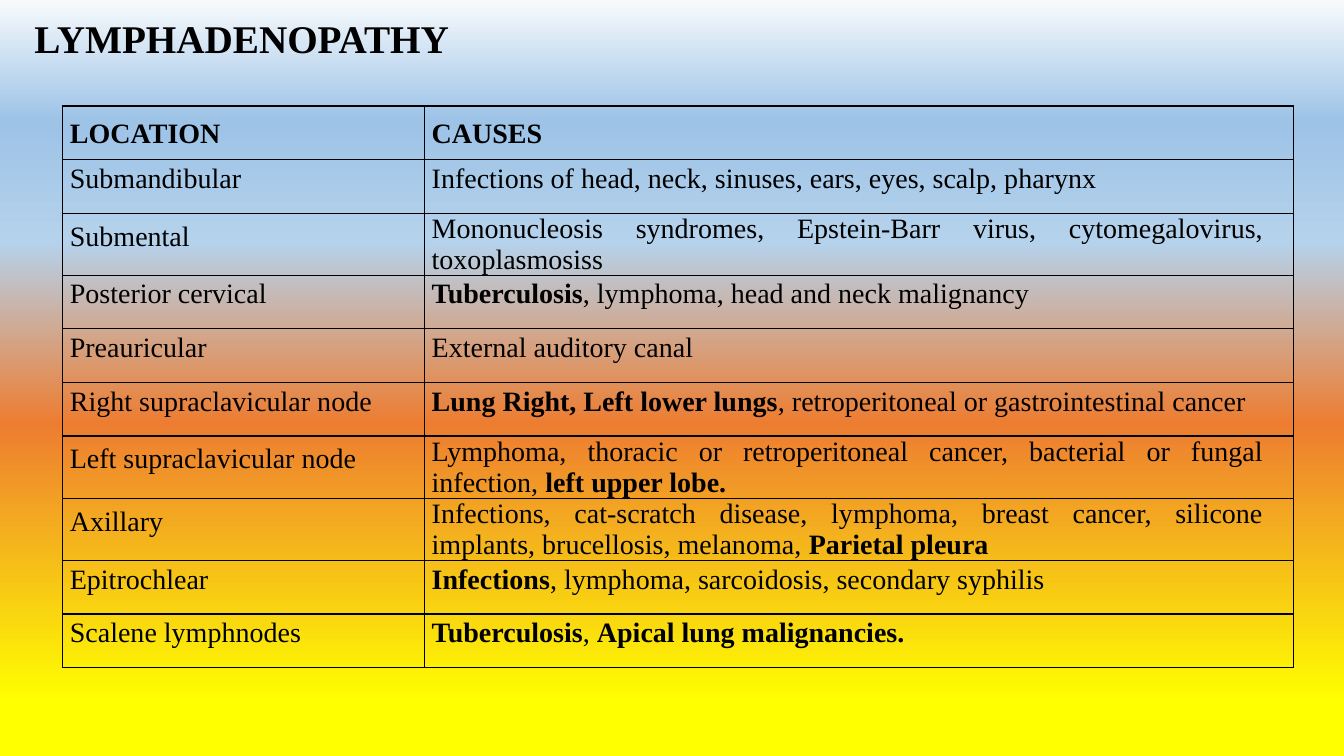
from copy import deepcopy

from lxml.etree import SubElement
from pptx import Presentation
from pptx.dml.color import RGBColor
from pptx.enum.text import MSO_ANCHOR, MSO_AUTO_SIZE, PP_ALIGN
from pptx.oxml.ns import qn
from pptx.util import Cm, Pt

FONT = "Times New Roman"
BLACK = RGBColor(0x00, 0x00, 0x00)
BACKGROUND_STOPS = [
    (0, RGBColor(0xF7, 0xFA, 0xFD)),
    (0.16, RGBColor(0x9D, 0xC3, 0xE6)),
    (0.32, RGBColor(0xB5, 0xD2, 0xEC)),
    (0.56, RGBColor(0xED, 0x7D, 0x31)),
    (0.93, RGBColor(0xFF, 0xFF, 0x00)),
]

HEADINGS = ["LOCATION", "CAUSES"]
# Each cause is a list of (text, bold) runs.
LYMPH_NODES = [
    ("Submandibular",
     [("Infections of head, neck, sinuses, ears, eyes, scalp, pharynx", False)]),
    ("Submental",
     [("Mononucleosis syndromes, Epstein-Barr virus, cytomegalovirus, "
       "toxoplasmosiss", False)]),
    ("Posterior cervical",
     [("Tuberculosis", True), (", lymphoma, head and neck malignancy", False)]),
    ("Preauricular", [("External auditory canal", False)]),
    ("Right supraclavicular node",
     [("Lung Right, Left lower lungs", True),
      (", retroperitoneal or gastrointestinal cancer", False)]),
    ("Left supraclavicular node",
     [("Lymphoma, thoracic or retroperitoneal cancer, bacterial or fungal "
       "infection, ", False), ("left upper lobe.", True)]),
    ("Axillary",
     [("Infections, cat-scratch disease, lymphoma, breast cancer, silicone "
       "implants, brucellosis, melanoma, ", False), ("Parietal pleura", True)]),
    ("Epitrochlear",
     [("Infections", True), (", lymphoma, sarcoidosis, secondary syphilis", False)]),
    ("Scalene lymphnodes",
     [("Tuberculosis", True), (", ", False), ("Apical lung malignancies.", True)]),
]
TWO_LINE_NODES = {"Submental", "Left supraclavicular node", "Axillary"}
COLUMN_WIDTHS = [Cm(9.12), Cm(21.9)]
ROW_HEIGHT = Cm(1.35)
TIGHT_SPACING = Pt(11.2)
RIGHT_INDENT = Cm(0.56)


def paint_background(slide):
    fill = slide.background.fill
    fill.gradient()
    fill.gradient_angle = 270
    stop_list = slide.element.find(".//" + qn("a:gsLst"))
    while len(stop_list) < len(BACKGROUND_STOPS):
        stop_list.append(deepcopy(stop_list[0]))
    for stop, (position, color) in zip(fill.gradient_stops, BACKGROUND_STOPS):
        stop.position = position
        stop.color.rgb = color


def add_runs(paragraph, runs, size):
    for text, bold in runs:
        run = paragraph.add_run()
        run.text = text
        run.font.name = FONT
        run.font.size = size
        run.font.bold = bold
        run.font.color.rgb = BLACK


def write_title(slide, text):
    title = slide.shapes.title
    title.left, title.top = Cm(0.61), Cm(0.36)
    title.width, title.height = Cm(32.44), Cm(3.58)
    frame = title.text_frame
    frame.auto_size = MSO_AUTO_SIZE.NONE
    frame.vertical_anchor = MSO_ANCHOR.TOP
    paragraph = frame.paragraphs[0]
    paragraph.alignment = PP_ALIGN.LEFT
    paragraph.line_spacing = 0.9
    add_runs(paragraph, [(text, True)], Pt(28))


def outline_cell(cell):
    properties = cell._tc.get_or_add_tcPr()
    for side in ("a:lnL", "a:lnR", "a:lnT", "a:lnB"):
        line = SubElement(properties, qn(side), w=str(Pt(1)))
        solid = SubElement(line, qn("a:solidFill"))
        SubElement(solid, qn("a:srgbClr"), val=str(BLACK))


def fill_cell(cell, runs, alignment, line_spacing):
    outline_cell(cell)
    cell.fill.background()
    cell.margin_left = cell.margin_right = Cm(0.19)
    cell.margin_top = cell.margin_bottom = 0
    cell.vertical_anchor = MSO_ANCHOR.MIDDLE
    paragraph = cell.text_frame.paragraphs[0]
    paragraph.alignment = alignment
    paragraph.line_spacing = line_spacing
    paragraph._p.get_or_add_pPr().set("marR", str(RIGHT_INDENT))
    add_runs(paragraph, runs, Pt(20))


def add_causes_table(slide):
    row_count = len(LYMPH_NODES) + 1
    table = slide.shapes.add_table(
        row_count, len(HEADINGS), Cm(1.57), Cm(2.67),
        sum(COLUMN_WIDTHS), ROW_HEIGHT * row_count).table
    table.first_row = table.horz_banding = False
    for column, width in zip(table.columns, COLUMN_WIDTHS):
        column.width = width
    for row in table.rows:
        row.height = ROW_HEIGHT
    for index, heading in enumerate(HEADINGS):
        fill_cell(table.cell(0, index), [(heading, True)], PP_ALIGN.LEFT, 1.07)
    for index, (location, causes) in enumerate(LYMPH_NODES, start=1):
        cause_spacing = 1.0 if location in TWO_LINE_NODES else TIGHT_SPACING
        fill_cell(table.cell(index, 0), [(location, False)],
                  PP_ALIGN.JUSTIFY, TIGHT_SPACING)
        fill_cell(table.cell(index, 1), causes, PP_ALIGN.JUSTIFY, cause_spacing)


def main():
    presentation = Presentation()
    presentation.slide_width, presentation.slide_height = Cm(33.87), Cm(19.05)
    slide = presentation.slides.add_slide(presentation.slide_layouts[0])
    subtitle = slide.placeholders[1].element
    subtitle.getparent().remove(subtitle)
    paint_background(slide)
    write_title(slide, "LYMPHADENOPATHY")
    add_causes_table(slide)
    presentation.save("out.pptx")


if __name__ == "__main__":
    main()
